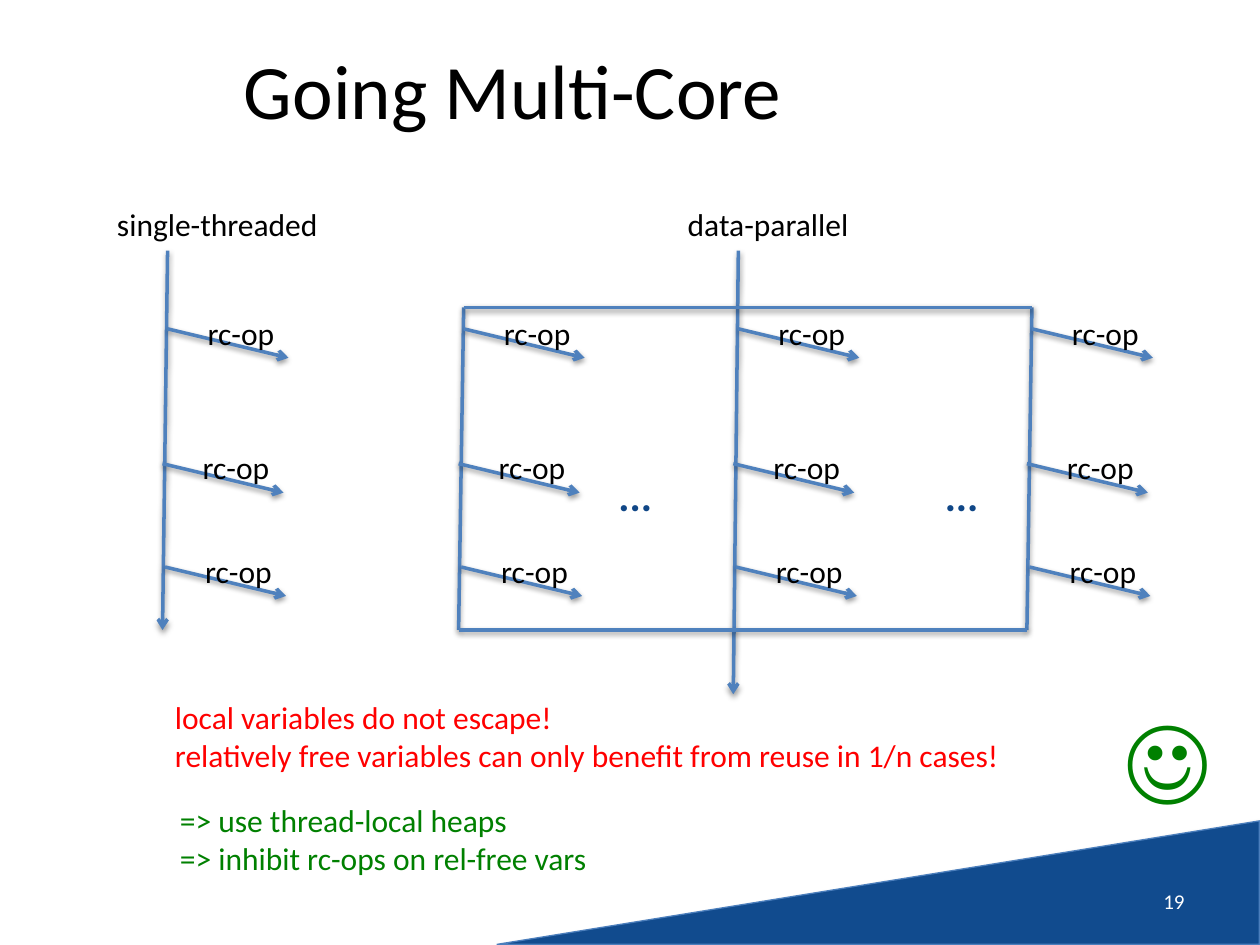
import pptx
import pptx.util
import pptx.dml.color
import pptx.enum.shapes
import pptx.enum.text
import pptx.oxml
import pptx.oxml.ns

# Content
TITLE = "Going Multi-Core"
PAGE = "19"
OP = "rc-op"
HEADS = ["single-threaded", "data-parallel"]
NOTES = ["local variables do not escape!",
         "relatively free variables can only benefit from reuse in 1/n cases!"]
FIXES = ["=> use thread-local heaps", "=> inhibit rc-ops on rel-free vars"]

HUES = {"ink": "000000", "line": "4F81BD", "wedge": "114B8E", "edge": "4B7EBC",
        "dots": "104787", "warn": "FF0000", "good": "008000", "page": "FFFFFF"}

# Grid, in inches: thread columns, and op rows as (shift from column, top)
WIDE, HIGH = 10, 7.5
COLS = [1.33, 3.68, 5.86, 8.19]
ROWS = [(0, 2.61), (-0.04, 3.68), (-0.02, 4.5)]
TOP, FORK, JOIN, END = 1.99, 2.44, 5, 5.51
LEAN = 0.04
ARM = (0.96, 0.23)
TAG = (0.22, -0.17)

# Formats
BODY = {"name": "Calibri", "size": pptx.util.Pt(18), "bold": False}
ALIGN = pptx.enum.text.PP_ALIGN
MID = pptx.enum.text.MSO_ANCHOR.MIDDLE
SHADE = ('<a:effectLst %s><a:outerShdw blurRad="%d" dist="%d" dir="5400000" '
         'rotWithShape="0"><a:srgbClr val="000000"><a:alpha val="%d"/>'
         '</a:srgbClr></a:outerShdw></a:effectLst>')

deck = pptx.Presentation()
deck.slide_width = pptx.util.Inches(WIDE)
deck.slide_height = pptx.util.Inches(HIGH)
slide = deck.slides.add_slide(deck.slide_layouts[6])


def hue(key):
    return pptx.dml.color.RGBColor.from_string(HUES[key])


def inch(*sizes):
    return [pptx.util.Inches(size) for size in sizes]


def shade(shape, dist, alpha):
    blur = pptx.util.Pt(3.1)
    xml = SHADE % (pptx.oxml.ns.nsdecls("a"), blur, pptx.util.Pt(dist), alpha * 1000)
    shape.element.spPr.append(pptx.oxml.parse_xml(xml))


def text(box, rows, key="ink", align=ALIGN.LEFT, frame=None, **font):
    area = slide.shapes.add_textbox(*inch(*box)).text_frame
    for name, value in {"word_wrap": False, **(frame or {})}.items():
        setattr(area, name, value)
    for i, row in enumerate(rows):
        para = area.paragraphs[0] if i == 0 else area.add_paragraph()
        para.alignment = align
        run = para.add_run()
        run.text = row
        for name, value in {**BODY, **font}.items():
            setattr(run.font, name, value)
        run.font.color.rgb = hue(key)


def line(x1, y1, x2, y2, arrow=False):
    kind = pptx.enum.shapes.MSO_CONNECTOR.STRAIGHT
    link = slide.shapes.add_connector(kind, *inch(x1, y1, x2, y2))
    link.line.color.rgb = hue("line")
    link.line.width = pptx.util.Pt(2)
    if arrow:
        stroke = link.element.spPr.find(pptx.oxml.ns.qn("a:ln"))
        stroke.append(pptx.oxml.parse_xml(
            '<a:tailEnd %s type="arrow"/>' % pptx.oxml.ns.nsdecls("a")))
    shade(link, 1.6, 38)


# Corner wedge: a right triangle turned on its side
wedge = slide.shapes.add_shape(pptx.enum.shapes.MSO_SHAPE.RIGHT_TRIANGLE,
                               *inch(6.48, 3.98, 0.98, 6.05))
wedge.rotation = 270
wedge.fill.solid()
wedge.fill.fore_color.rgb = hue("wedge")
wedge.line.color.rgb = hue("edge")
wedge.line.width = pptx.util.Pt(0.75)
shade(wedge, 1.8, 35)

# Title and page number
block = {"word_wrap": True, "vertical_anchor": MID}
text((0.5, 0.08, 7.14, 1.25), [TITLE], align=ALIGN.CENTER, frame=block,
     size=pptx.util.Pt(44))
text((7.17, 6.95, 2.33, 0.4), [PAGE], "page", ALIGN.RIGHT, block,
     size=pptx.util.Pt(12))

# Threads: top, bottom and arrowhead of each column
SPANS = [(TOP, JOIN, True), (FORK, JOIN, False), (TOP, END, True), (FORK, JOIN, False)]
for col, (top, low, arrow) in zip(COLS, SPANS):
    line(col, top, col - LEAN, low, arrow)
    for shift, y in ROWS:
        x = col + shift
        line(x, y, x + ARM[0], y + ARM[1], True)
        text((x + TAG[0], y + TAG[1], 0.74, 0.4), [OP])

# Thread headings
for head, col, wide in zip(HEADS, COLS[::2], (1.81, 1.49)):
    text((col - 0.5, 1.58, wide, 0.4), [head])

# Fork and join bars, dots for further threads
for y, shift in ((JOIN, LEAN), (FORK, 0)):
    line(COLS[1] - shift, y, COLS[3] - shift, y)
for x in (4.81, 7.4):
    text((x, 3.68, 0.47, 0.5), ["..."], "dots", size=pptx.util.Pt(24), bold=True)

# Findings
text((1.29, 5.49, 6.81, 0.71), NOTES, "warn")
text((1.33, 6.31, 3.46, 0.71), FIXES, "good")
text((8.83, 5.49, 0.84, 1.01), ["☺"], "good", size=pptx.util.Pt(54), bold=True)

deck.save("out.pptx")
